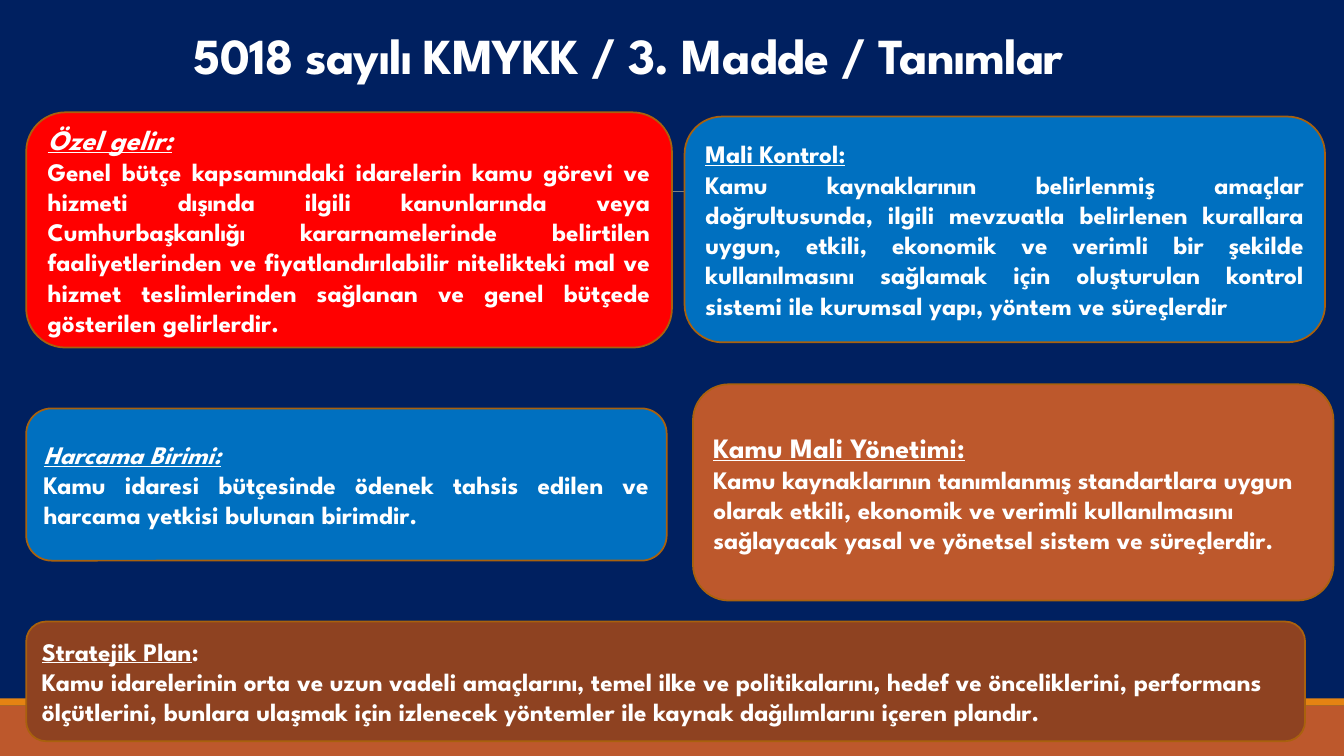
from dataclasses import dataclass

from lxml import etree
from pptx import Presentation
from pptx import util as u
from pptx.dml.color import RGBColor
from pptx.enum import shapes, text
from pptx.oxml.ns import qn

PX = 9525


@dataclass(frozen=True)
class Theme:
    font: str = "League Spartan"
    navy: str = "002060"
    white: str = "FFFFFF"
    red: str = "FF0000"
    blue: str = "0070C0"
    rust: str = "BD582C"
    brown: str = "8E4221"
    orange: str = "E48312"
    outline: str = "A9610D"
    grey: str = "808080"
    title_size: int = 36
    large_size: int = 20
    body_size: int = 18


THEME = Theme()
LEFT = text.PP_ALIGN.LEFT
JUSTIFY = text.PP_ALIGN.JUSTIFY


def px(*lengths):
    return [u.Emu(n * PX) for n in lengths]


def rgb(value):
    return RGBColor.from_string(value)


def format_run(r, size, italic=False, underline=False):
    font = r.font
    font.name = THEME.font
    font.size = u.Pt(size)
    font.bold = True
    font.italic = italic
    font.underline = underline
    font.color.rgb = rgb(THEME.white)


def add_filled(slide, kind, box, fill):
    sp = slide.shapes.add_shape(kind, *px(*box))
    sp.shadow.inherit = False
    sp.fill.solid()
    sp.fill.fore_color.rgb = rgb(fill)
    return sp


def add_band(slide, box, fill):
    sp = add_filled(slide, shapes.MSO_SHAPE.RECTANGLE, box, fill)
    sp.line.fill.background()


def add_rule(slide, ends):
    line = slide.shapes.add_connector(shapes.MSO_CONNECTOR.STRAIGHT, *px(*ends))
    line.line.color.rgb = rgb(THEME.grey)
    line.line.width = u.Pt(0.5)
    etree.SubElement(line._element.spPr, qn("a:effectLst"))


def set_title(slide, box, wording):
    sp = slide.shapes.title
    sp.left, sp.top, sp.width, sp.height = px(*box)
    tf = sp.text_frame
    tf.text = wording
    tf.auto_size = text.MSO_AUTO_SIZE.NONE
    tf.vertical_anchor = text.MSO_ANCHOR.BOTTOM
    p = tf.paragraphs[0]
    p.alignment = LEFT
    p.line_spacing = 0.85
    r = p.runs[0]
    format_run(r, THEME.title_size)
    r.font._element.set("spc", "-50")


def add_definition(slide, box, fill, term, meaning, size=THEME.body_size,
                   italic=False, align=JUSTIFY, colon_underlined=True):
    sp = add_filled(slide, shapes.MSO_SHAPE.FLOWCHART_ALTERNATE_PROCESS, box, fill)
    sp.line.color.rgb = rgb(THEME.outline)
    sp.line.width = u.Pt(1.25)
    tf = sp.text_frame
    tf.word_wrap = True
    tf.vertical_anchor = text.MSO_ANCHOR.MIDDLE
    heading = tf.paragraphs[0]
    heading.alignment = align
    for wording, underline in ((term, True), (":", colon_underlined)):
        r = heading.add_run()
        r.text = wording
        format_run(r, size, italic, underline)
    p = tf.add_paragraph()
    p.text = meaning
    p.alignment = align
    format_run(p.runs[0], THEME.body_size)


def main():
    prs = Presentation()
    prs.slide_width, prs.slide_height = px(1280, 720)
    slide = prs.slides.add_slide(prs.slide_layouts[5])
    slide.background.fill.solid()
    slide.background.fill.fore_color.rgb = rgb(THEME.navy)

    add_band(slide, (0, 672, 1280, 48), THEME.rust)
    add_band(slide, (0, 665, 1280, 7), THEME.orange)
    add_rule(slide, (126, 182, 1172, 182))
    set_title(slide, (175, 10, 1026, 76), "5018 sayılı KMYKK / 3. Madde / Tanımlar")

    add_definition(
        slide, (25, 107, 615, 224), THEME.red, "Özel gelir",
        "Genel bütçe kapsamındaki idarelerin kamu görevi ve hizmeti dışında ilgili "
        "kanunlarında veya Cumhurbaşkanlığı kararnamelerinde belirtilen "
        "faaliyetlerinden ve fiyatlandırılabilir nitelikteki mal ve hizmet "
        "teslimlerinden sağlanan ve genel bütçede gösterilen gelirlerdir.",
        size=THEME.large_size, italic=True)
    add_definition(
        slide, (660, 366, 610, 206), THEME.rust, "Kamu Mali Yönetimi",
        "Kamu kaynaklarının tanımlanmış standartlara uygun olarak etkili, ekonomik "
        "ve verimli kullanılmasını sağlayacak yasal ve yönetsel sistem ve "
        "süreçlerdir.",
        size=THEME.large_size, align=LEFT)
    add_definition(
        slide, (25, 389, 610, 145), THEME.blue, "Harcama Birimi",
        "Kamu idaresi bütçesinde ödenek tahsis edilen ve harcama yetkisi bulunan "
        "birimdir.",
        italic=True)
    add_definition(
        slide, (652, 111, 610, 215), THEME.blue, "Mali Kontrol",
        "Kamu kaynaklarının belirlenmiş amaçlar doğrultusunda, ilgili mevzuatla "
        "belirlenen kurallara uygun, etkili, ekonomik ve verimli bir şekilde "
        "kullanılmasını sağlamak için oluşturulan kontrol sistemi ile kurumsal "
        "yapı, yöntem ve süreçlerdir")
    add_definition(
        slide, (25, 592, 1218, 114), THEME.brown, "Stratejik Plan",
        "Kamu idarelerinin orta ve uzun vadeli amaçlarını, temel ilke ve "
        "politikalarını, hedef ve önceliklerini, performans ölçütlerini, bunlara "
        "ulaşmak için izlenecek yöntemler ile kaynak dağılımlarını içeren plandır.",
        align=LEFT, colon_underlined=False)

    prs.save("out.pptx")


if __name__ == "__main__":
    main()
